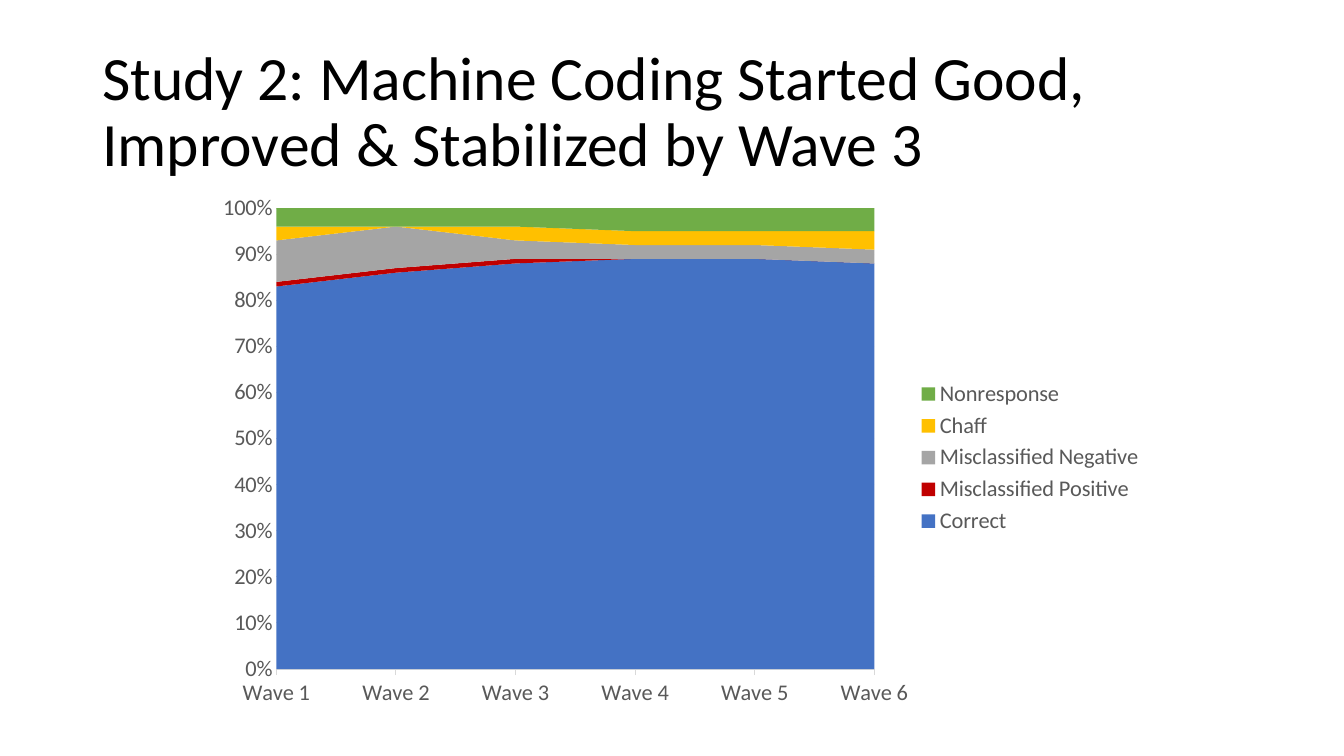
import pptx
import pptx.chart.data
import pptx.dml.color
import pptx.enum.chart
import pptx.enum.text
import pptx.oxml
import pptx.oxml.ns
import pptx.util

Pt = pptx.util.Pt
qn = pptx.oxml.ns.qn

WAVES = [f"Wave {number}" for number in range(1, 7)]
OUTCOMES = [
    ("Correct", "4472C4", (0.83, 0.86, 0.88, 0.89, 0.89, 0.88)),
    ("Misclassified Positive", "C00000", (0.01, 0.01, 0.01, 0, 0, 0)),
    ("Misclassified Negative", "A5A5A5", (0.09, 0.09, 0.04, 0.03, 0.03, 0.03)),
    ("Chaff", "FFC000", (0.03, 0, 0.03, 0.03, 0.03, 0.04)),
    ("Nonresponse", "70AD47", (0.05, 0.04, 0.05, 0.05, 0.05, 0.05)),
]


def color(value):
    return pptx.dml.color.RGBColor.from_string(value)


class SlideBuilder:
    font_name = "Calibri"
    title_color = "000000"
    label_color = "595959"
    line_color = "D9D9D9"

    def __init__(self, page):
        self.page = page

    def set_font(self, font, size, value):
        font.name = self.font_name
        font.size = Pt(size)
        font.color.rgb = color(value)

    def set_line(self, line):
        line.color.rgb = color(self.line_color)
        line.width = Pt(0.75)

    def add_title(self, text, left, top, width, height):
        box = self.page.shapes.add_textbox(Pt(left), Pt(top), Pt(width), Pt(height))
        frame = box.text_frame
        frame.word_wrap = True
        frame.vertical_anchor = pptx.enum.text.MSO_ANCHOR.MIDDLE
        para = frame.paragraphs[0]
        para.text = text
        para.line_spacing = 0.9
        self.set_font(para.font, 44, self.title_color)

    def add_area_chart(self, categories, series_rows, left, top, width, height, plot_box):
        data = pptx.chart.data.CategoryChartData(number_format="0%")
        data.categories = categories
        for name, _, values in series_rows:
            data.add_series(name, values)
        chart = self.page.shapes.add_chart(
            pptx.enum.chart.XL_CHART_TYPE.AREA_STACKED,
            Pt(left), Pt(top), Pt(width), Pt(height), data,
        ).chart
        chart.has_title = False
        self.set_font(chart.font, 16, self.label_color)
        for series, (_, fill_color, _) in zip(chart.plots[0].series, series_rows):
            series.format.fill.solid()
            series.format.fill.fore_color.rgb = color(fill_color)
            series.format.line.fill.background()
        self.style_axes(chart)
        self.add_legend(chart)
        self.place_plot(chart, plot_box)

    def style_axes(self, chart):
        marks = pptx.enum.chart.XL_TICK_MARK
        waves, shares = chart.category_axis, chart.value_axis
        for axis in (waves, shares):
            axis.minor_tick_mark = marks.NONE
            self.set_font(axis.tick_labels.font, 16, self.label_color)
        waves.has_major_gridlines = False
        waves.major_tick_mark = marks.OUTSIDE
        self.set_line(waves.format.line)
        shares.minimum_scale = 0
        shares.maximum_scale = 1
        shares.major_unit = 0.1
        shares.major_tick_mark = marks.NONE
        shares.format.line.fill.background()
        shares.has_major_gridlines = True
        self.set_line(shares.major_gridlines.format.line)
        shares.tick_labels.number_format = "0%"
        shares.tick_labels.number_format_is_linked = False

    def add_legend(self, chart):
        chart.has_legend = True
        chart.legend.position = pptx.enum.chart.XL_LEGEND_POSITION.RIGHT
        chart.legend.include_in_layout = False
        self.set_font(chart.legend.font, 16, self.label_color)

    def place_plot(self, chart, plot_box):
        area = chart.plots[0]._element.getparent()
        for old_layout in area.findall(qn("c:layout")):
            area.remove(old_layout)
        settings = [("layoutTarget", "inner"), ("xMode", "edge"), ("yMode", "edge")]
        settings += zip("xywh", plot_box)
        parts = "".join(f'<c:{tag} val="{value}"/>' for tag, value in settings)
        namespace = pptx.oxml.ns.nsdecls("c")
        area.insert(0, pptx.oxml.parse_xml(
            f"<c:layout {namespace}><c:manualLayout>{parts}</c:manualLayout></c:layout>"
        ))
        for crossing in area.iter(qn("c:crossBetween")):
            crossing.set("val", "midCat")


def main():
    deck = pptx.Presentation()
    deck.slide_width, deck.slide_height = Pt(960), Pt(540)
    page = deck.slides.add_slide(deck.slide_layouts[6])
    builder = SlideBuilder(page)
    builder.add_title(
        "Study 2: Machine Coding Started Good, Improved & Stabilized by Wave 3",
        66, 28.75, 828, 104.4,
    )
    builder.add_area_chart(
        WAVES, OUTCOMES, 135.4, 133.2, 689, 387.4, (0.09, 0.04, 0.62, 0.85)
    )
    deck.save("out.pptx")


if __name__ == "__main__":
    main()
